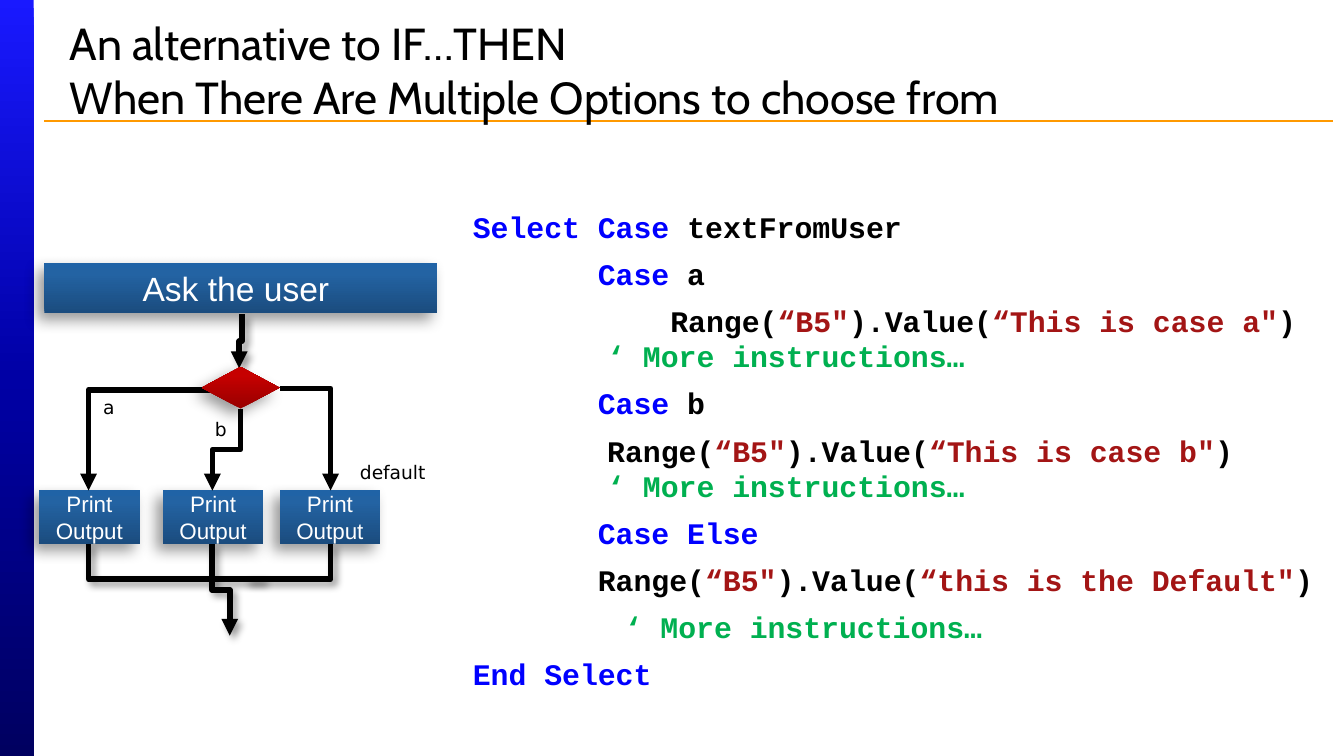
from dataclasses import dataclass

from lxml.etree import SubElement
from pptx import Presentation
from pptx.dml.color import RGBColor
from pptx.enum.shapes import MSO_CONNECTOR, MSO_SHAPE
from pptx.enum.text import MSO_ANCHOR, PP_ALIGN
from pptx.oxml.ns import qn
from pptx.util import Inches, Pt

SLIDE_WIDTH = 10
SLIDE_HEIGHT = SLIDE_WIDTH * 9 / 16
BLACK, WHITE = "000000", "FFFFFF"
KEYWORD, STRING, COMMENT = "0000FF", "A31515", "00B050"
BLUE_STOPS = ((0, "1B4C7E"), (80, "2363A3"), (100, "2063A6"))
RED_STOPS = ((0, "980000"), (80, "C60000"), (100, "C70000"))
SIDEBAR_STOPS = ((0, "1919FF"), (50, "0000A5"), (100, "000060"))
MORE = ("‘ More instructions…", COMMENT)


@dataclass
class Box:
    left: float
    top: float
    width: float
    height: float


@dataclass
class Step:
    box: Box
    text: str
    size: int


@dataclass
class Elbow:
    begin: tuple
    end: tuple
    vertical_first: bool
    bends: int
    arrow: bool
    shadow: bool


@dataclass
class CodeLine:
    runs: list
    margin: float = 0
    indent: float = 0
    continuation: tuple = ()


def hex_color(value: str) -> RGBColor:
    return RGBColor.from_string(value)


def add_run(paragraph, text: str, size: int, font: str, color: str, bold: bool = False) -> None:
    run = paragraph.add_run()
    run.text = text
    run.font.size = Pt(size)
    run.font.name = font
    run.font.bold = bold
    run.font.color.rgb = hex_color(color)


def add_shadow(properties, blur: int, distance: int, angle: int) -> None:
    effects = properties.find(qn("a:effectLst"))
    shadow = SubElement(effects, qn("a:outerShdw"), blurRad=str(Pt(blur)),
                        dist=str(Pt(distance)), dir=str(angle * 60000), rotWithShape="0")
    color = SubElement(shadow, qn("a:srgbClr"), val=BLACK)
    SubElement(color, qn("a:alpha"), val="40000")


def add_gradient_shape(slide, kind, box: Box, stops: tuple, angle: int, shadow: bool = True):
    shape = slide.shapes.add_shape(kind, Inches(box.left), Inches(box.top),
                                   Inches(box.width), Inches(box.height))
    shape.fill.gradient()
    shape.fill.gradient_angle = angle
    shape.line.fill.background()
    shape.shadow.inherit = False
    properties = shape._element.spPr
    stop_list = properties.find(qn("a:gradFill")).find(qn("a:gsLst"))
    for stop in list(stop_list):
        stop_list.remove(stop)
    for position, color in stops:
        stop = SubElement(stop_list, qn("a:gs"), pos=str(position * 1000))
        SubElement(stop, qn("a:srgbClr"), val=color)
    if shadow:
        add_shadow(properties, 8, 5, 135)
    return shape


def add_step(slide, step: Step) -> None:
    shape = add_gradient_shape(slide, MSO_SHAPE.FLOWCHART_PROCESS, step.box, BLUE_STOPS, 90)
    frame = shape.text_frame
    frame.word_wrap = True
    frame.vertical_anchor = MSO_ANCHOR.MIDDLE
    frame.margin_left = frame.margin_right = Inches(0.05)
    frame.margin_top = frame.margin_bottom = Inches(0.05)
    paragraph = frame.paragraphs[0]
    paragraph.alignment = PP_ALIGN.CENTER
    add_run(paragraph, step.text, step.size, "Arial", WHITE)


def add_line(slide, kind, begin: tuple, end: tuple, color: str, width: float):
    connector = slide.shapes.add_connector(kind, Inches(begin[0]), Inches(begin[1]),
                                           Inches(end[0]), Inches(end[1]))
    connector.line.color.rgb = hex_color(color)
    connector.line.width = Pt(width)
    SubElement(connector._element.spPr, qn("a:effectLst"))
    return connector


def add_elbow(slide, elbow: Elbow) -> None:
    begin, end = elbow.begin, elbow.end
    rightward = end[0] > begin[0]
    if elbow.vertical_first:
        center_x, center_y = (begin[0] + end[0]) / 2, (begin[1] + end[1]) / 2
        half_width, half_height = abs(end[1] - begin[1]) / 2, abs(end[0] - begin[0]) / 2
        begin = (center_x - half_width, center_y - half_height)
        end = (center_x + half_width, center_y + half_height)
    connector = add_line(slide, MSO_CONNECTOR.ELBOW, begin, end, BLACK, 3)
    properties = connector._element.spPr
    properties.find(qn("a:prstGeom")).set("prst", f"bentConnector{elbow.bends + 1}")
    if elbow.vertical_first:
        transform = properties.find(qn("a:xfrm"))
        transform.set("rot", str((270 if rightward else 90) * 60000))
        if rightward:
            transform.set("flipH", "1")
    if elbow.arrow:
        SubElement(properties.find(qn("a:ln")), qn("a:tailEnd"), type="triangle")
    if elbow.shadow:
        add_shadow(properties, 4, 3, 45)


def add_text_frame(slide, box: Box):
    shape = slide.shapes.add_textbox(Inches(box.left), Inches(box.top),
                                     Inches(box.width), Inches(box.height))
    shape.text_frame.word_wrap = True
    return shape.text_frame


def add_code(slide, box: Box, lines: list) -> None:
    frame = add_text_frame(slide, box)
    for index, line in enumerate(lines):
        paragraph = frame.add_paragraph() if index else frame.paragraphs[0]
        paragraph.space_before = Pt(6)
        properties = paragraph._p.get_or_add_pPr()
        properties.set("marL", str(Inches(line.margin)))
        properties.set("indent", str(Inches(line.indent)))
        for text, color in line.runs:
            add_run(paragraph, text, 16, "Courier New", color, True)
        if line.continuation:
            text, color = line.continuation
            paragraph.add_line_break()
            add_run(paragraph, text, 16, "Courier New", color, True)


def range_call(message: str) -> list:
    return [("Range(", BLACK), ("“B5\"", STRING), (").Value(", BLACK),
            (f"“{message}\"", STRING), (")", BLACK)]


def main() -> None:
    presentation = Presentation()
    presentation.slide_width, presentation.slide_height = Inches(SLIDE_WIDTH), Inches(SLIDE_HEIGHT)
    slide = presentation.slides.add_slide(presentation.slide_layouts[6])

    sidebar = Box(0, 0, 0.25, SLIDE_HEIGHT)
    add_gradient_shape(slide, MSO_SHAPE.RECTANGLE, sidebar, SIDEBAR_STOPS, 270, False)
    add_line(slide, MSO_CONNECTOR.STRAIGHT, (0.33, 0.9), (9.92, 0.9), "FF9900", 0.75)

    title = add_text_frame(slide, Box(0.42, 0.23, 9.33, 0.58))
    title.vertical_anchor = MSO_ANCHOR.MIDDLE
    add_run(title.paragraphs[0], "An alternative to IF…THEN", 24, "Cabin", BLACK)
    title.paragraphs[0].add_line_break()
    add_run(title.paragraphs[0], "When There Are Multiple Options to choose from", 24, "Cabin", BLACK)

    add_code(slide, Box(3.42, 1.5, 6.5, 3.75), [
        CodeLine([("Select Case", KEYWORD), (" textFromUser", BLACK)]),
        CodeLine([("Case", KEYWORD), (" a", BLACK)], 0.93),
        CodeLine(range_call("This is case a"), 1, 0.47, MORE),
        CodeLine([("Case", KEYWORD), (" b", BLACK)], 0.93),
        CodeLine(range_call("This is case b"), 1, 0, MORE),
        CodeLine([("Case Else", KEYWORD)], 0.93),
        CodeLine(range_call("this is the Default"), 0.93),
        CodeLine([MORE], 1.13),
        CodeLine([("End Select", KEYWORD)]),
    ])

    add_step(slide, Step(Box(0.33, 1.96, 2.92, 0.37), "Ask the user ", 18))
    add_elbow(slide, Elbow((1.8, 2.34), (1.78, 2.74), True, 2, True, True))
    add_elbow(slide, Elbow((1.58, 4.05), (1.71, 4.73), True, 2, True, True))
    for left in (0.29, 1.21, 2.08):
        add_step(slide, Step(Box(left, 3.65, 0.75, 0.4), "Print Output", 12))
    for elbow in (
        Elbow((0.66, 4.05), (1.96, 4.31), True, 1, False, True),
        Elbow((2.46, 4.05), (1.83, 4.31), True, 1, False, True),
        Elbow((1.62, 2.9), (0.66, 3.65), False, 1, True, False),
        Elbow((1.79, 3.04), (1.58, 3.65), True, 2, True, False),
        Elbow((2.08, 2.89), (2.46, 3.65), False, 1, True, False),
    ):
        add_elbow(slide, elbow)

    for text, box in (("a", Box(0.67, 2.9, 0.33, 0.27)), ("b", Box(1.5, 3.06, 0.33, 0.27)),
                      ("default", Box(2.58, 3.38, 0.75, 0.27))):
        add_run(add_text_frame(slide, box).paragraphs[0], text, 10, "DejaVu Sans", BLACK)
    add_gradient_shape(slide, MSO_SHAPE.FLOWCHART_DECISION, Box(1.5, 2.73, 0.58, 0.31), RED_STOPS, 90)

    presentation.save("out.pptx")


if __name__ == "__main__":
    main()
